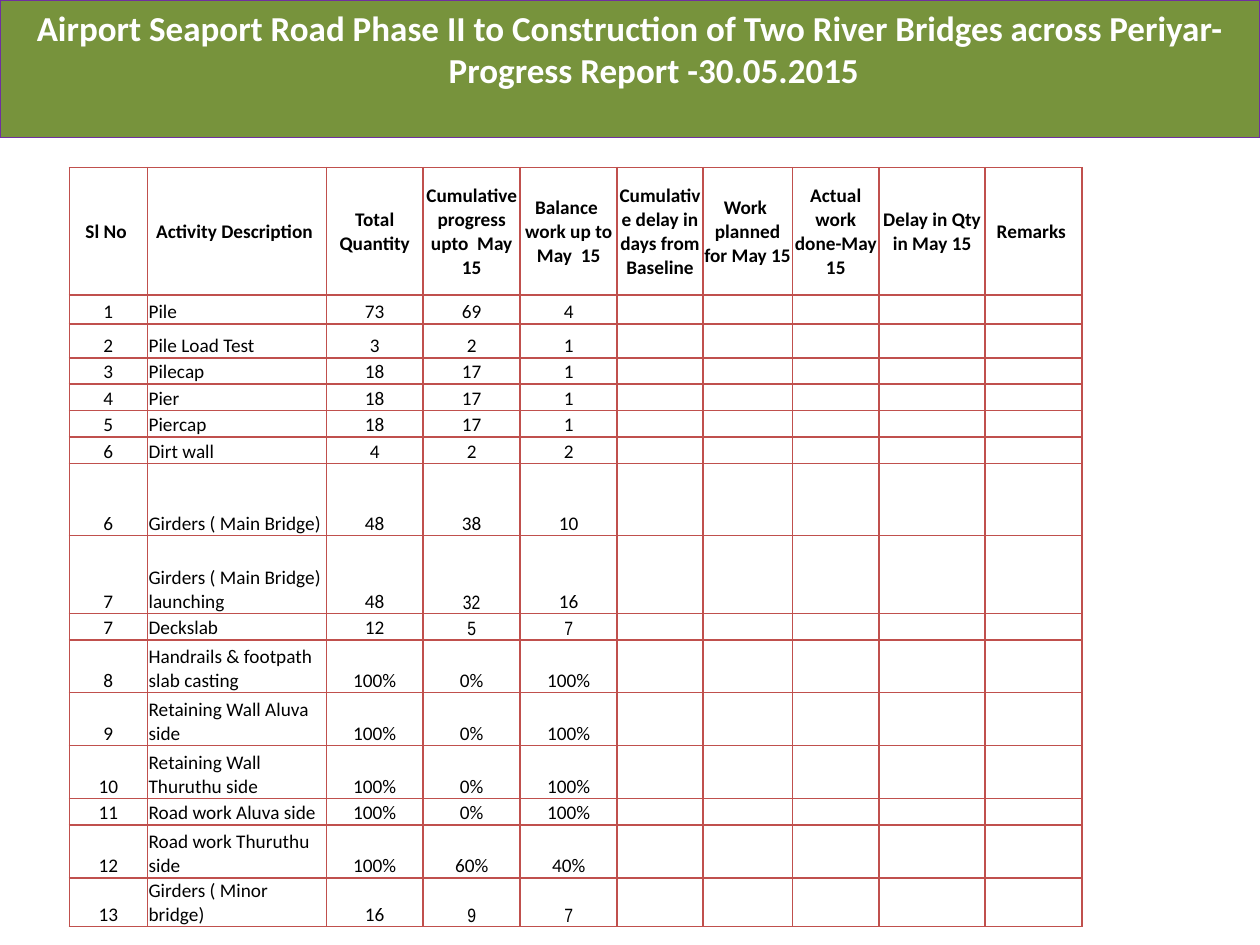
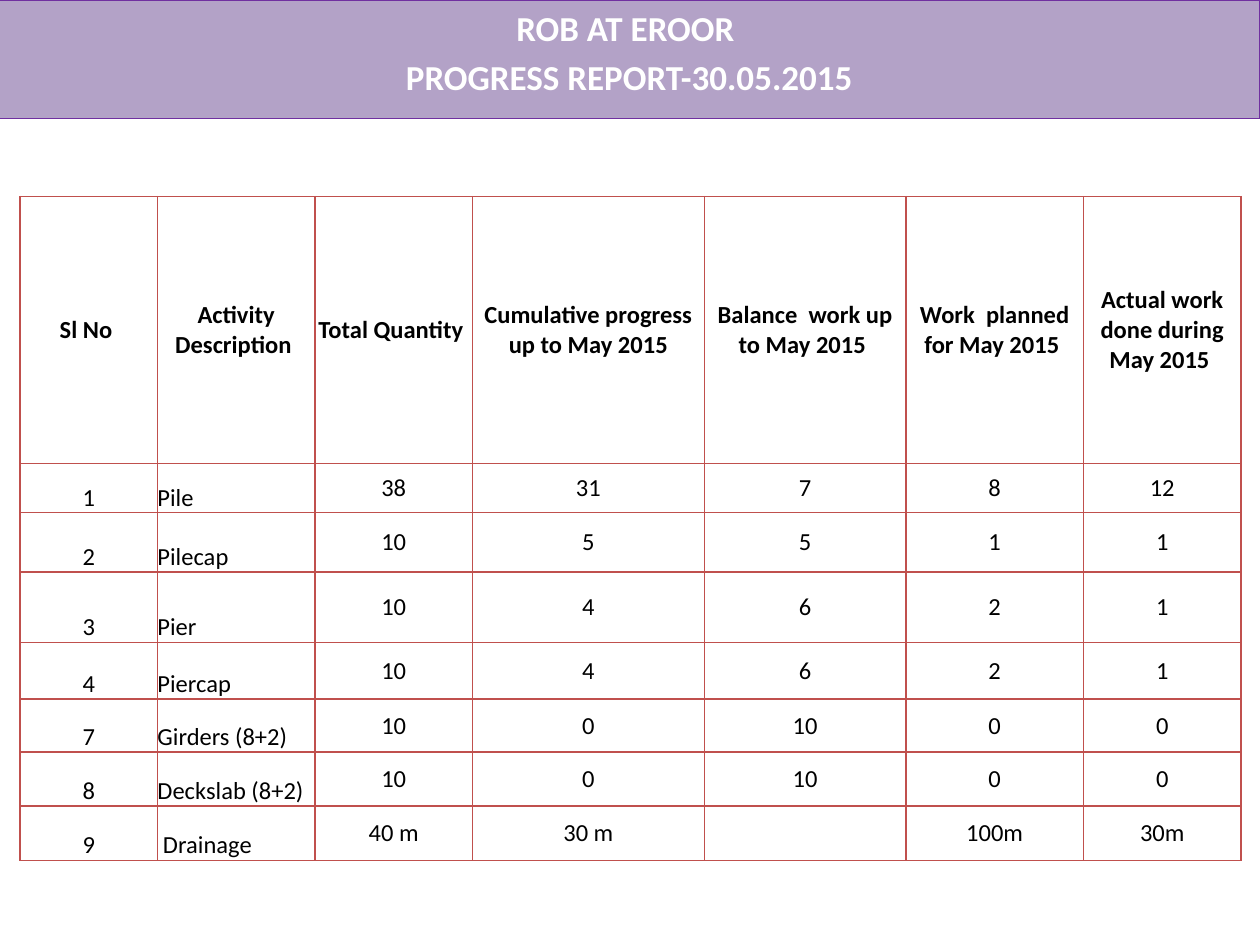
"""Build two bridge-works progress slides, each a title band above a bordered table."""
from lxml import etree
from pptx import Presentation
from pptx.dml.color import RGBColor
from pptx.enum.text import MSO_ANCHOR, MSO_AUTO_SIZE, PP_ALIGN
from pptx.oxml.ns import qn
from pptx.util import Inches, Pt

TOP, MIDDLE, BOTTOM = MSO_ANCHOR.TOP, MSO_ANCHOR.MIDDLE, MSO_ANCHOR.BOTTOM
LEFT, CENTER = PP_ALIGN.LEFT, PP_ALIGN.CENTER
NO_AUTOFIT = MSO_AUTO_SIZE.NONE

BODY_FONT, NARROW_FONT = "Calibri", "Arial Narrow"
WHITE, BLACK, PURPLE, RED = "FFFFFF", "000000", "7030A0", "C0504D"
TITLE_ONLY = 5
DESCRIPTION_COLUMN = 1
HANGING = 0.38

REPORTS = [
    {
        "title": ["Airport Seaport Road Phase II to Construction of Two River Bridges "
                  "across Periyar- Progress Report -30.05.2015"],
        "band": (0, 0, 10, 1.09),
        "band_color": "77933C",
        "origin": (0.55, 1.33),
        "widths": [0.62, 1.42, 0.77, 0.77, 0.77, 0.68, 0.71, 0.69, 0.84, 0.77],
        "heights": [1.01, 0.23, 0.27, 0.21, 0.21, 0.21, 0.21, 0.57, 0.62,
                    0.21, 0.42, 0.42, 0.42, 0.21, 0.42, 0.38],
        "size": 11,
        "inset": 0.01,
        "figure_anchor": BOTTOM,
        "narrow": {(8, 3), (9, 3), (9, 4), (15, 3), (15, 4)},
        "headings": ["Sl No ", "Activity Description ", "Total Quantity",
                     "Cumulative progress upto  May 15", "Balance  work up to May  15",
                     "Cumulative delay in days from Baseline", "Work  planned for May 15",
                     "Actual work done-May 15", "Delay in Qty in May 15", "Remarks "],
        "activities": [
            ("1", "Pile", "73", "69", "4"),
            ("2", "Pile Load Test", "3", "2", "1"),
            ("3", "Pilecap", "18", "17", "1"),
            ("4", "Pier", "18", "17", "1"),
            ("5", "Piercap", "18", "17", "1"),
            ("6", "Dirt wall", "4", "2", "2"),
            ("6", "Girders ( Main Bridge)", "48", "38", "10"),
            ("7", "Girders ( Main Bridge) launching", "48", "32", "16"),
            ("7", "Deckslab", "12", "5", "7"),
            ("8", "Handrails & footpath slab casting", "100%", "0%", "100%"),
            ("9", "Retaining Wall Aluva side", "100%", "0%", "100%"),
            ("10", "Retaining Wall Thuruthu side", "100%", "0%", "100%"),
            ("11", "Road work Aluva side", "100%", "0%", "100%"),
            ("12", "Road work Thuruthu side", "100%", "60%", "40%"),
            ("13", "Girders ( Minor bridge)", "16", "9", "7"),
        ],
    },
    {
        "title": ["ROB AT EROOR ", "PROGRESS REPORT-30.05.2015"],
        "band": (-0.01, 0, 10.01, 0.94),
        "band_color": "B3A2C7",
        "origin": (0.16, 1.56),
        "widths": [1.09, 1.25, 1.25, 1.84, 1.6, 1.41, 1.25],
        "heights": [2.12, 0.39, 0.47, 0.56, 0.45, 0.42, 0.43, 0.43],
        "size": 14,
        "inset": 0,
        "figure_anchor": MIDDLE,
        "narrow": set(),
        "headings": ["Sl No ", "Activity Description ", "Total Quantity ",
                     "Cumulative progress up to May 2015", "Balance  work up to May 2015 ",
                     "Work  planned for May 2015 ", "Actual work done during May 2015 "],
        "activities": [
            ("1", "Pile", "38", "31", "7", "8", "12"),
            ("2", "Pilecap", "10", "5", "5", "1", "1"),
            ("3", "Pier", "10", "4", "6", "2", "1"),
            ("4", "Piercap", "10", "4", "6", "2", "1"),
            ("7", "Girders (8+2)", "10", "0", "10", "0", "0"),
            ("8", "Deckslab (8+2)", "10", "0", "10", "0", "0"),
            ("9", " Drainage", "40 m", "30 m", "", "100m", "30m"),
        ],
    },
]


def rgb(color):
    """Turn a hex string into a colour."""
    return RGBColor.from_string(color)


def write(paragraph, text, size, color=BLACK, font=BODY_FONT, bold=False, align=CENTER):
    """Write one formatted run, or give an empty paragraph its text size."""
    paragraph.alignment = align
    if not text:
        paragraph._p.get_or_add_endParaRPr().set("sz", str(size * 100))
        return
    run = paragraph.add_run()
    run.text = text
    run.font.size = Pt(size)
    run.font.name = font
    run.font.bold = bold
    run.font.color.rgb = rgb(color)


def add_title_band(slide, report):
    """Turn the title placeholder into the coloured band."""
    band = slide.shapes.title
    band.left, band.top, band.width, band.height = map(Inches, report["band"])
    band.fill.solid()
    band.fill.fore_color.rgb = rgb(report["band_color"])
    band.line.color.rgb = rgb(PURPLE)
    band.line.width = Pt(0.75)
    frame = band.text_frame
    frame.word_wrap = True
    frame.auto_size = NO_AUTOFIT
    frame.vertical_anchor = TOP
    for number, line in enumerate(report["title"]):
        paragraph = frame.add_paragraph() if number else frame.paragraphs[0]
        properties = paragraph._p.get_or_add_pPr()
        properties.set("marL", str(Inches(HANGING)))
        properties.set("indent", str(-Inches(HANGING)))
        paragraph.space_before = Pt(4 if number else 0)
        write(paragraph, line, 20, color=WHITE, bold=True)


def add_borders(cell):
    """Draw a thin red line on each side of a cell."""
    properties = cell._tc.get_or_add_tcPr()
    for side in ("lnL", "lnR", "lnT", "lnB"):
        border = etree.SubElement(properties, qn(f"a:{side}"), w=str(Pt(1)))
        fill = etree.SubElement(border, qn("a:solidFill"))
        etree.SubElement(fill, qn("a:srgbClr"), val=RED)


def add_progress_table(slide, report):
    """Add the table of activities and their progress."""
    widths, heights = report["widths"], report["heights"]
    box = (*report["origin"], sum(widths), sum(heights))
    table = slide.shapes.add_table(len(heights), len(widths), *map(Inches, box)).table
    table.first_row = table.horz_banding = False
    for column, width in zip(table.columns, widths):
        column.width = Inches(width)
    for row, height in zip(table.rows, heights):
        row.height = Inches(height)

    for r, entries in enumerate([report["headings"], *report["activities"]]):
        heading = r == 0
        for c in range(len(widths)):
            cell = table.cell(r, c)
            add_borders(cell)
            cell.fill.background()
            cell.margin_left = cell.margin_right = cell.margin_top = Inches(report["inset"])
            cell.margin_bottom = 0
            if heading:
                cell.vertical_anchor = MIDDLE
            else:
                cell.vertical_anchor = BOTTOM if c <= DESCRIPTION_COLUMN else report["figure_anchor"]
            write(cell.text_frame.paragraphs[0],
                  entries[c] if c < len(entries) else "",
                  report["size"],
                  font=NARROW_FONT if (r, c) in report["narrow"] else BODY_FONT,
                  bold=heading,
                  align=LEFT if c == DESCRIPTION_COLUMN and not heading else CENTER)


def main():
    """Build and save the presentation."""
    deck = Presentation()
    deck.slide_width, deck.slide_height = Inches(10), Inches(7.5)
    for report in REPORTS:
        slide = deck.slides.add_slide(deck.slide_layouts[TITLE_ONLY])
        add_title_band(slide, report)
        add_progress_table(slide, report)
    deck.save("out.pptx")


if __name__ == "__main__":
    main()
